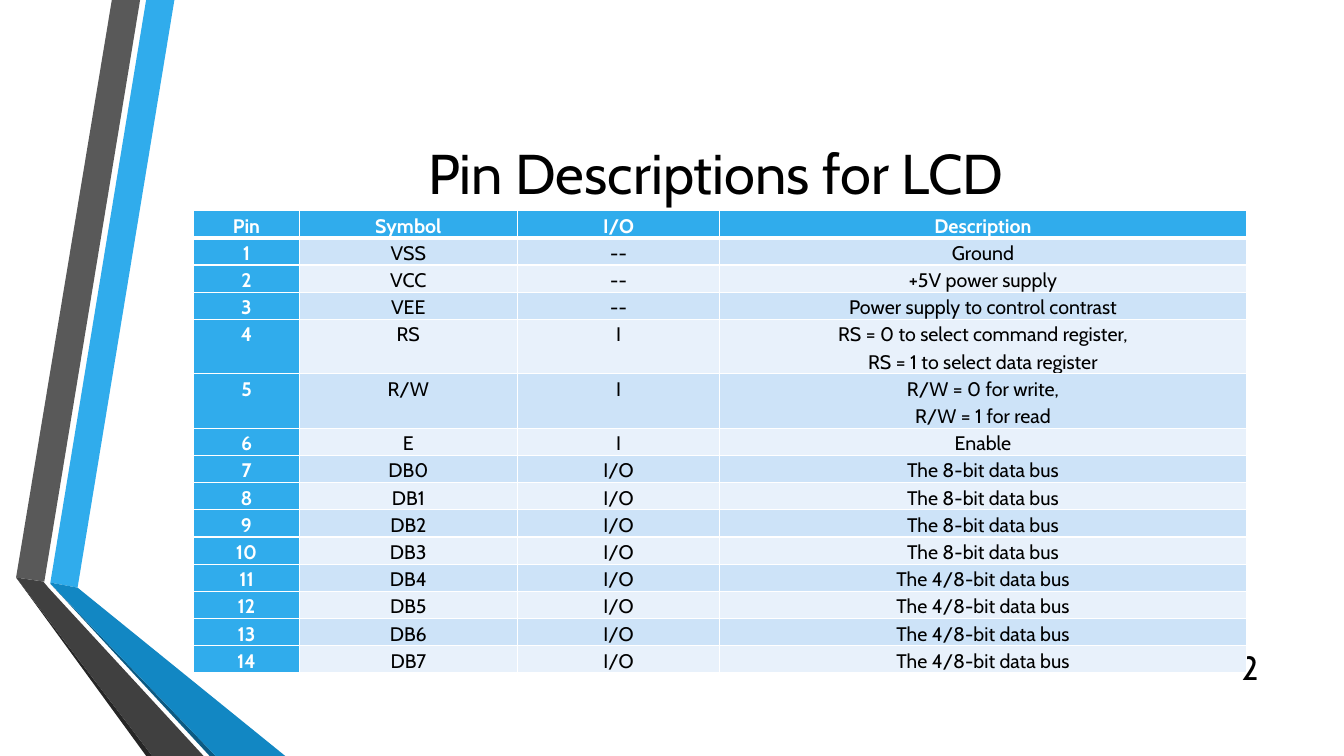
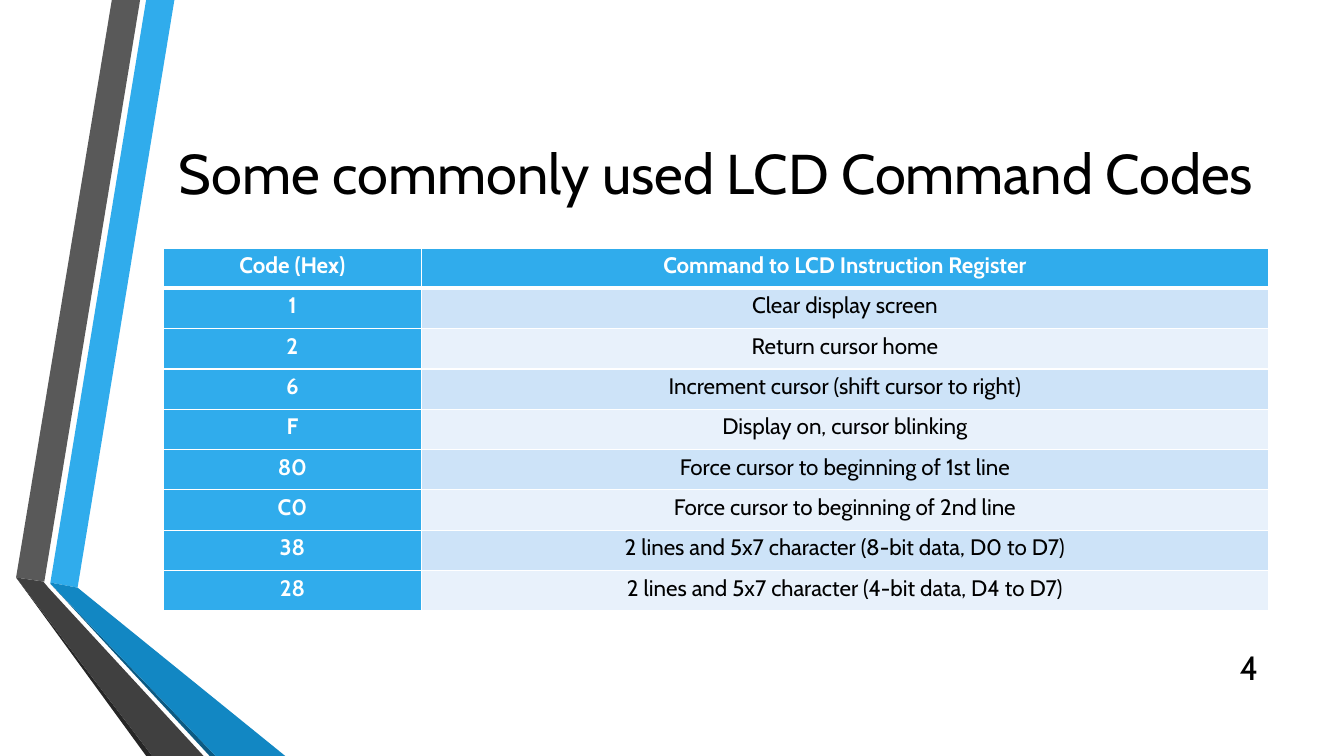
"""Build two slides of LCD reference tables beside folded ribbon bands."""

from lxml import etree
from pptx import Presentation
from pptx.dml.color import RGBColor
from pptx.enum.text import MSO_ANCHOR, MSO_AUTO_SIZE, PP_ALIGN
from pptx.oxml.ns import qn
from pptx.util import Inches, Pt

CENTER, RIGHT = PP_ALIGN.CENTER, PP_ALIGN.RIGHT
MIDDLE, TOP = MSO_ANCHOR.MIDDLE, MSO_ANCHOR.TOP
NO_AUTOFIT = MSO_AUTO_SIZE.NONE
TITLE_ONLY = 5

FONT = "Cabin"
BLACK, WHITE = "000000", "FFFFFF"
BLUE = "30ACEC"
ROW_FILLS = ("CDE3F8", "E8F1FB")
THIN, THICK = 1, 3

RIBBONS = (
    (BLUE, ((0.5, 5.78), (0.77, 5.83), (1.73, 0), (1.45, 0))),
    ("595959", ((1.39, 0), (1.11, 0), (0.16, 5.73), (0.44, 5.77))),
    ("262626", ((0.16, 5.73), (1.45, 7.5), (1.51, 7.5))),
    ("0C5A82", ((0.5, 5.79), (2.08, 7.5), (2.14, 7.5))),
    ("1287C3", ((0.5, 5.79), (2.14, 7.5), (2.83, 7.5), (0.77, 5.83), (0.5, 5.78))),
    ("404040", ((2.02, 7.5), (0.48, 5.83), (0.43, 5.77), (0.16, 5.73), (1.51, 7.5))),
)

PIN_ROWS = [
    ("Pin", "Symbol", "I/O", "Description"),
    ("1", "VSS", "--", "Ground"),
    ("2", "VCC", "--", "+5V power supply"),
    ("3", "VEE", "--", "Power supply to control contrast"),
    ("4", "RS", "I", "RS = 0 to select command register,\nRS = 1 to select data register"),
    ("5", "R/W", "I", "R/W = 0 for write,\nR/W = 1 for read"),
    ("6", "E", "I", "Enable"),
] + [
    (str(bit + 7), f"DB{bit}", "I/O", f"The {'8' if bit < 4 else '4/8'}-bit data bus")
    for bit in range(8)
]

COMMAND_ROWS = [
    ("Code (Hex)", "Command to LCD Instruction Register"),
    ("1", "Clear display screen"),
    ("2", "Return cursor home"),
    ("6", "Increment cursor (shift cursor to right)"),
    ("F", "Display on, cursor blinking"),
    ("80", "Force cursor to beginning of 1st line"),
    ("C0", "Force cursor to beginning of 2nd line"),
    ("38", "2 lines and 5x7 character (8-bit data, D0 to D7)"),
    ("28", "2 lines and 5x7 character (4-bit data, D4 to D7)"),
]


def color(hex_string):
    """Return the colour for a hex string."""
    return RGBColor.from_string(hex_string)


def set_attributes(target, values):
    """Set each named attribute of the target."""
    for name, value in values.items():
        setattr(target, name, value)


class Deck:
    """Hold the shared style and the current slide."""

    def __init__(self):
        """Start an empty widescreen presentation."""
        self.presentation = Presentation()
        set_attributes(
            self.presentation,
            {"slide_width": Inches(13.33), "slide_height": Inches(7.5)},
        )
        self.slide = None

    def add_slide(self, title, number):
        """Add a slide with its ribbons, title and number."""
        layout = self.presentation.slide_layouts[TITLE_ONLY]
        self.slide = self.presentation.slides.add_slide(layout)
        for fill, points in RIBBONS:
            self.add_ribbon(fill, points)
        self.add_title(title)
        self.add_number(number)

    def add_ribbon(self, fill, points):
        """Draw one flat closed outline."""
        corners = [(Inches(x), Inches(y)) for x, y in points]
        builder = self.slide.shapes.build_freeform(*corners[0], scale=1.0)
        builder.add_line_segments(corners[1:], close=True)
        shape = builder.convert_to_shape()
        shape.shadow.inherit = False
        shape.fill.solid()
        shape.fill.fore_color.rgb = color(fill)
        shape.line.fill.background()

    def place(self, shape, left, top, width, height):
        """Move and size a shape given in inches."""
        set_attributes(shape, {
            "left": Inches(left), "top": Inches(top),
            "width": Inches(width), "height": Inches(height),
        })

    def set_text(self, frame, text, size, align=CENTER, fill=BLACK, bold=False, spacing=1.0):
        """Fill a text frame with uniformly styled paragraphs."""
        frame.text = text
        for paragraph in frame.paragraphs:
            set_attributes(paragraph, {"alignment": align, "line_spacing": spacing})
            for run in paragraph.runs:
                set_attributes(run.font, {"name": FONT, "size": Pt(size), "bold": bold})
                run.font.color.rgb = color(fill)

    def add_title(self, text):
        """Place and format the title placeholder."""
        title = self.slide.shapes.title
        self.place(title, 1.62, 0.75, 10.96, 1.92)
        set_attributes(title.text_frame, {
            "word_wrap": True, "auto_size": NO_AUTOFIT, "vertical_anchor": MIDDLE,
        })
        self.set_text(title.text_frame, text, 40)

    def add_number(self, number):
        """Add the slide number at the lower right."""
        box = self.slide.shapes.add_textbox(
            Inches(11.98), Inches(6.42), Inches(0.6), Inches(0.4)
        )
        set_attributes(box.text_frame, {"word_wrap": True, "vertical_anchor": MIDDLE})
        self.set_text(box.text_frame, str(number), 24, align=RIGHT)

    def add_borders(self, cell, row_index):
        """Draw white cell borders, thick below the header row."""
        widths = {
            "L": THIN,
            "R": THIN,
            "T": THICK if row_index == 1 else THIN,
            "B": THICK if row_index == 0 else THIN,
        }
        properties = cell._tc.get_or_add_tcPr()
        for position, (side, width) in enumerate(widths.items()):
            line = etree.Element(qn(f"a:ln{side}"), w=str(Pt(width)))
            solid = etree.SubElement(line, qn("a:solidFill"))
            etree.SubElement(solid, qn("a:srgbClr"), val=WHITE)
            properties.insert(position, line)

    def add_table(self, rows, left, top, widths, line_height, size):
        """Add a banded table with a coloured header row and first column."""
        heights = [
            line_height * max(text.count("\n") + 1 for text in row) for row in rows
        ]
        table = self.slide.shapes.add_table(
            len(rows), len(widths), Inches(left), Inches(top),
            Inches(sum(widths)), Inches(sum(heights)),
        ).table
        set_attributes(table, {"first_row": False, "horz_banding": False})
        for column, width in zip(table.columns, widths):
            column.width = Inches(width)
        for row_index, values in enumerate(rows):
            table.rows[row_index].height = Inches(heights[row_index])
            for column_index, text in enumerate(values):
                heading = row_index == 0 or column_index == 0
                cell = table.cell(row_index, column_index)
                set_attributes(cell, {
                    "margin_left": Inches(0.07), "margin_right": Inches(0.07),
                    "margin_top": 0, "margin_bottom": 0, "vertical_anchor": TOP,
                })
                cell.fill.solid()
                cell.fill.fore_color.rgb = color(
                    BLUE if heading else ROW_FILLS[(row_index - 1) % 2]
                )
                self.add_borders(cell, row_index)
                self.set_text(
                    cell.text_frame, text, size, bold=heading,
                    fill=WHITE if heading else BLACK, spacing=1.15,
                )


def main():
    """Build both slides and save the presentation."""
    deck = Deck()
    deck.add_slide("Pin Descriptions for LCD", 2)
    deck.add_table(PIN_ROWS, 1.92, 2.09, (1.05, 2.16, 2.01, 5.22), 0.27, 14)
    deck.add_slide("Some commonly used LCD Command Codes", 4)
    deck.add_table(COMMAND_ROWS, 1.62, 2.46, (2.56, 8.4), 0.4, 16)
    deck.presentation.save("out.pptx")


if __name__ == "__main__":
    main()
